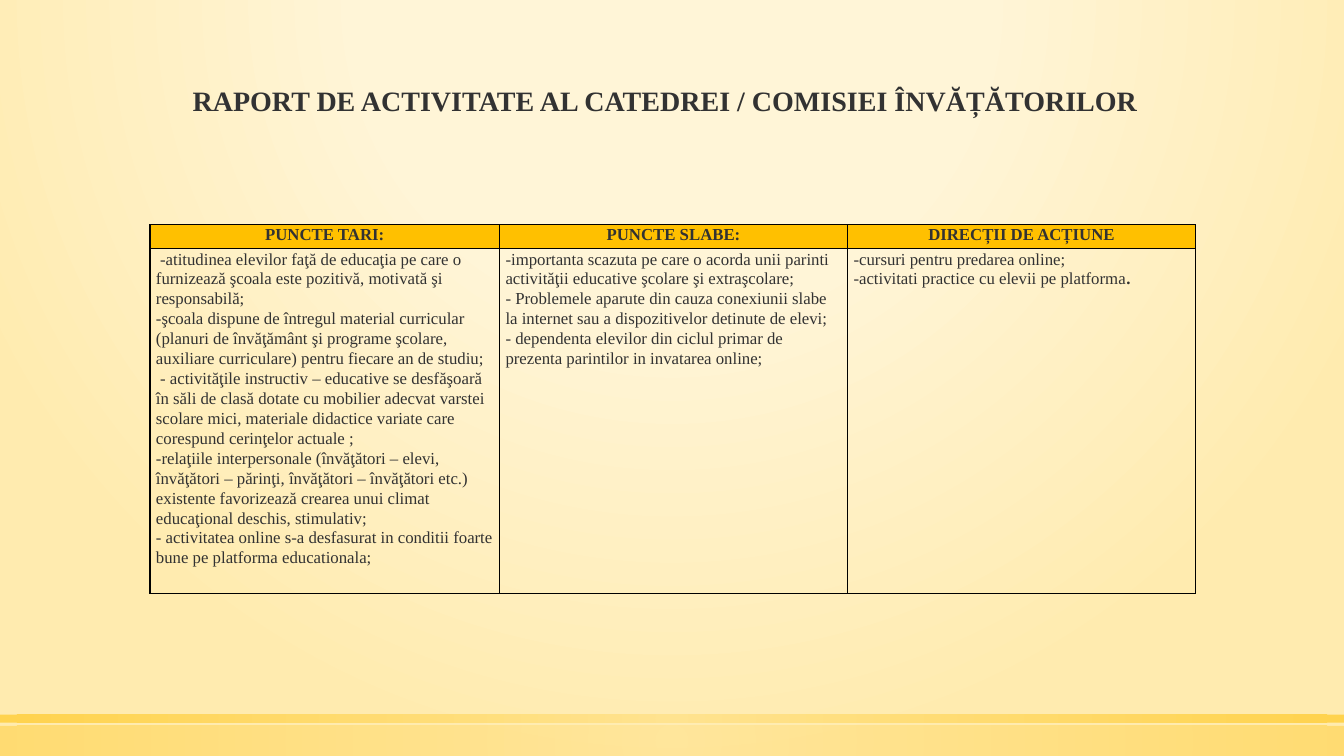
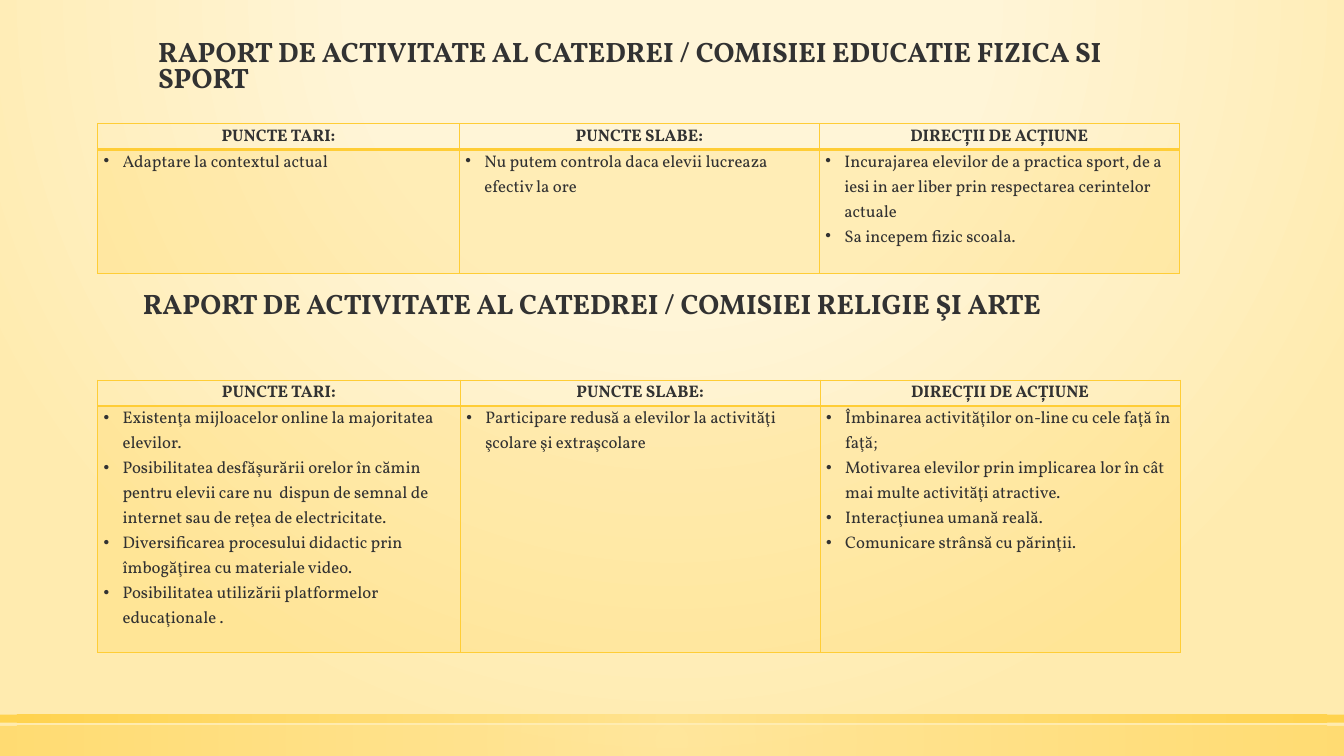
from pptx import Presentation
from pptx.dml.color import RGBColor
from pptx.enum.shapes import MSO_SHAPE
from pptx.enum.text import MSO_ANCHOR, MSO_AUTO_SIZE, PP_ALIGN
from pptx.oxml import parse_xml
from pptx.oxml.ns import nsdecls, qn
from pptx.util import Cm, Pt

RECTANGLE = MSO_SHAPE.RECTANGLE
TOP, BOTTOM = MSO_ANCHOR.TOP, MSO_ANCHOR.BOTTOM
NO_AUTOFIT = MSO_AUTO_SIZE.NONE
LEFT, CENTER = PP_ALIGN.LEFT, PP_ALIGN.CENTER

INK = RGBColor(0x32, 0x32, 0x32)
BLACK = RGBColor(0, 0, 0)
AMBER = RGBColor(0xFF, 0xC0, 0x00)
GOLD = RGBColor(0xFF, 0xCD, 0x36)
PALE_GOLD = RGBColor(0xFF, 0xE1, 0x86)
CREAM = RGBColor(0xFF, 0xF5, 0xD7)
SAND = RGBColor(0xFF, 0xEB, 0xAF)

SERIF, VOLLKORN = "Times New Roman", "Vollkorn"
PAGE_WIDTH, PAGE_HEIGHT = 33.87, 19.05
TITLE_SIZE, TABLE_SIZE = 20, 12
INDENT = Cm(0.48)
HEADERS = ["PUNCTE TARI:", "PUNCTE SLABE:", "DIRECȚII DE ACȚIUNE"]

# Table looks
PLAIN_TABLE = {"font": SERIF, "line": BLACK, "header_fill": AMBER,
               "body_fill": None, "rule": 1, "bullets": False}
GOLD_TABLE = {"font": VOLLKORN, "line": GOLD, "header_fill": None,
              "body_fill": GOLD, "rule": 2, "bullets": True}


def set_format(target, values):
    for name, value in values.items():
        setattr(target, name, value)


def set_gradient(fill, owner, stops, focus):
    """Circular gradient; stops are (position, colour, opacity) in percent."""
    fill.gradient()
    old = next(owner.iter(qn("a:gradFill")))
    marks = "".join(
        f'<a:gs pos="{place * 1000}"><a:srgbClr val="{colour}">'
        f'<a:alpha val="{opacity * 1000}"/></a:srgbClr></a:gs>'
        for place, colour, opacity in stops)
    sides = " ".join(f'{side}="{value * 1000}"' for side, value in zip("ltrb", focus))
    old.getparent().replace(old, parse_xml(
        f'<a:gradFill {nsdecls("a")} rotWithShape="1"><a:gsLst>{marks}</a:gsLst>'
        f'<a:path path="circle"><a:fillToRect {sides}/></a:path></a:gradFill>'))


class Report:
    def __init__(self):
        self.deck = Presentation()
        set_format(self.deck, {"slide_width": Cm(PAGE_WIDTH),
                               "slide_height": Cm(PAGE_HEIGHT)})
        self.layout = self.deck.slide_layouts[5]
        self.page = None
        master = self.deck.slide_master
        set_gradient(master.background.fill, master.element,
                     [(0, CREAM, 59), (40, CREAM, 66), (100, SAND, 100)],
                     (50, -80, 50, 180))

    def new_page(self):
        self.page = self.deck.slides.add_slide(self.layout)
        self.band(18.29, 0.76, 50)
        self.band(18.01, 0.2, 80)

    def band(self, top, height, opacity):
        box = self.page.shapes.add_shape(
            RECTANGLE, 0, Cm(top), Cm(PAGE_WIDTH), Cm(height))
        box.shadow.inherit = False
        box.line.fill.background()
        set_gradient(box.fill, box.element,
                     [(0, PALE_GOLD, opacity), (100, GOLD, opacity)],
                     (50, 50, 50, 50))

    def fill_para(self, para, text, font, size, bold, **layout):
        """Text is a string, or a (text, bold ending) pair."""
        set_format(para, layout)
        parts = (text,) if isinstance(text, str) else text
        for index, part in enumerate(parts):
            span = para.add_run()
            span.text = part
            set_format(span.font, {"name": font, "size": Pt(size),
                                   "bold": bold or index > 0})
            span.font.color.rgb = INK

    def heading(self, text, place, font, anchor, align, spacing, is_title=True):
        left, top, width, height = (Cm(value) for value in place)
        if is_title:
            box = self.page.shapes.title
            set_format(box, {"left": left, "top": top, "width": width, "height": height})
        else:
            box = self.page.shapes.add_textbox(left, top, width, height)
        set_format(box.text_frame, {"word_wrap": True, "auto_size": NO_AUTOFIT,
                                    "vertical_anchor": anchor})
        self.fill_para(box.text_frame.paragraphs[0], text, font, TITLE_SIZE, True,
                       alignment=align, line_spacing=spacing)

    def table(self, left, top, widths, heights, columns, look):
        frame = self.page.shapes.add_table(
            2, len(widths), Cm(left), Cm(top), Cm(sum(widths)), Cm(sum(heights)))
        table = frame.table
        set_format(table, {"first_row": False, "horz_banding": False})
        for column, width in zip(table.columns, widths):
            column.width = Cm(width)
        for row, height in zip(table.rows, heights):
            row.height = Cm(height)
        for index, (header, texts) in enumerate(zip(HEADERS, columns)):
            self.cell(table.cell(0, index), [header], look, True)
            self.cell(table.cell(1, index), texts, look, False)

    def cell(self, cell, texts, look, is_header):
        set_format(cell, {"margin_left": Cm(0.15), "margin_right": Cm(0.15),
                          "margin_top": 0, "margin_bottom": 0})
        # Borders come before the fill
        properties = cell._tc.get_or_add_tcPr()
        rule_side = "B" if is_header else "T"
        for side in "LRTB":
            width = Pt(look["rule"] if side == rule_side else 1)
            properties.append(parse_xml(
                f'<a:ln{side} {nsdecls("a")} w="{width}"><a:solidFill>'
                f'<a:srgbClr val="{look["line"]}"/></a:solidFill></a:ln{side}>'))
        colour = look["header_fill" if is_header else "body_fill"]
        if colour is None:
            cell.fill.background()
        else:
            cell.fill.solid()
            cell.fill.fore_color.rgb = colour
            if not is_header:
                tint = properties.find(qn("a:solidFill")).find(qn("a:srgbClr"))
                tint.append(parse_xml(f'<a:alpha {nsdecls("a")} val="20000"/>'))
        # Text
        for index, text in enumerate(texts):
            text_frame = cell.text_frame
            para = text_frame.add_paragraph() if index else text_frame.paragraphs[0]
            self.fill_para(para, text, look["font"], TABLE_SIZE, is_header,
                           alignment=CENTER if is_header else LEFT, line_spacing=1.07)
            if look["bullets"] and not is_header:
                bullet = para._p.get_or_add_pPr()
                bullet.set("marL", str(INDENT))
                bullet.set("indent", str(-INDENT))
                bullet.append(parse_xml(f'<a:buChar {nsdecls("a")} char="•"/>'))


def main():
    report = Report()

    # Primary school teachers
    report.new_page()
    report.heading("RAPORT DE ACTIVITATE AL CATEDREI / COMISIEI ÎNVĂȚĂTORILOR",
                   (2.13, 1.93, 29.26, 1.12), SERIF, TOP, CENTER, 1.07)
    report.table(3.78, 5.66, [8.81, 8.77, 8.77], [0.61, 8.69], [
        [" -atitudinea elevilor faţă de educaţia pe care o furnizează şcoala este "
         "pozitivă, motivată şi responsabilă;",
         "-şcoala dispune de întregul material curricular (planuri de învăţământ şi "
         "programe şcolare, auxiliare curriculare) pentru fiecare an de studiu;",
         " - activităţile instructiv – educative se desfăşoară în săli de clasă dotate "
         "cu mobilier adecvat varstei scolare mici, materiale didactice variate care "
         "corespund cerinţelor actuale ;",
         "-relaţiile interpersonale (învăţători – elevi, învăţători – părinţi, "
         "învăţători – învăţători etc.) existente favorizează crearea unui climat "
         "educaţional deschis, stimulativ;",
         "- activitatea online s-a desfasurat in conditii foarte bune pe platforma "
         "educationala;"],
        ["-importanta scazuta pe care o acorda unii parinti activităţii educative "
         "şcolare şi extraşcolare;",
         "- Problemele aparute din cauza conexiunii slabe la internet sau a "
         "dispozitivelor detinute de elevi;",
         "- dependenta elevilor din ciclul primar de prezenta parintilor in invatarea "
         "online;"],
        ["-cursuri pentru predarea online;",
         ("-activitati practice cu elevii pe platforma", ".")],
    ], PLAIN_TABLE)

    # Physical education
    report.new_page()
    report.heading("RAPORT DE ACTIVITATE AL CATEDREI / COMISIEI EDUCATIE FIZICA SI SPORT",
                   (3.73, 0.61, 26.42, 1.88), VOLLKORN, BOTTOM, LEFT, 0.77)
    report.table(2.46, 3.12, [9.12, 9.07, 9.07], [0.65, 3.12], [
        ["Adaptare la contextul actual"],
        ["Nu putem controla daca elevii lucreaza efectiv la ore"],
        ["Incurajarea elevilor de a practica sport, de a iesi in aer liber prin "
         "respectarea cerintelor actuale",
         "Sa incepem fizic scoala."],
    ], GOLD_TABLE)

    # Religion and arts
    report.heading("RAPORT DE ACTIVITATE AL CATEDREI / COMISIEI RELIGIE ŞI ARTE",
                   (3.35, 6.3, 26.42, 1.88), VOLLKORN, BOTTOM, LEFT, 0.77,
                   is_title=False)
    report.table(2.46, 9.58, [9.14, 9.07, 9.07], [0.65, 6.22], [
        ["Existenţa mijloacelor online la majoritatea elevilor.",
         "Posibilitatea desfăşurării orelor în cămin pentru elevii care nu  dispun de "
         "semnal de internet sau de reţea de electricitate.",
         "Diversificarea procesului didactic prin îmbogăţirea cu materiale video.",
         "Posibilitatea utilizării platformelor educaţionale ."],
        ["Participare redusă a elevilor la activităţi şcolare şi extraşcolare"],
        ["Îmbinarea activităţilor on-line cu cele faţă în faţă;",
         "Motivarea elevilor prin implicarea lor în cât mai multe activităţi atractive.",
         "Interacţiunea umană reală.",
         "Comunicare strânsă cu părinţii."],
    ], GOLD_TABLE)

    report.deck.save("out.pptx")


if __name__ == "__main__":
    main()
